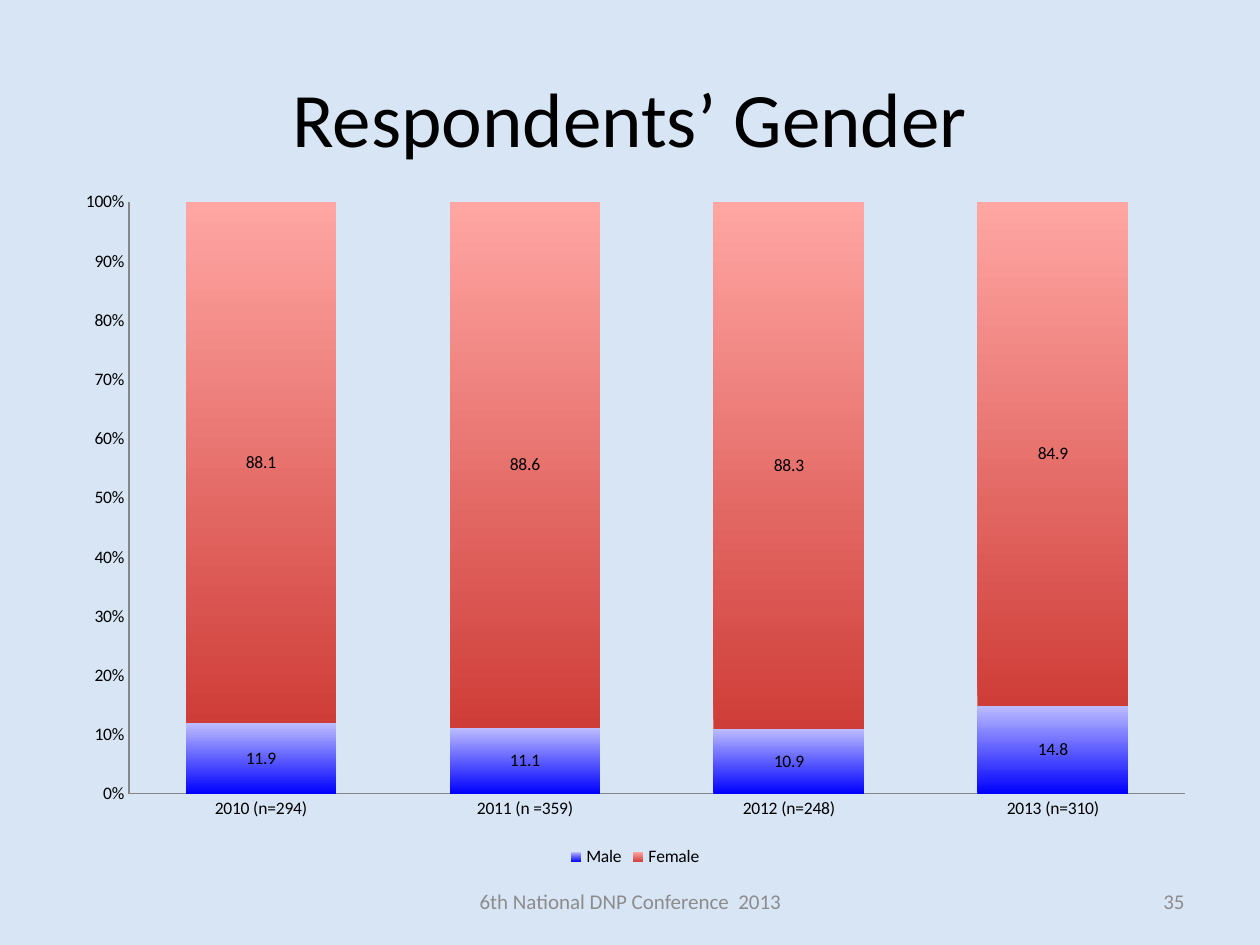
from dataclasses import dataclass

from lxml import etree
from pptx import Presentation
from pptx import util as u
from pptx.chart.data import CategoryChartData
from pptx.dml.color import RGBColor
from pptx.enum import chart as ch
from pptx.enum import text

PX = 914400 / 126
FONT = "Calibri"
COLORS = {
    "background": "D8E5F5",
    "ink": "000000",
    "footer": "8C8C8C",
    "axis": "868686",
    "male_bottom": "0000FF",
    "male_top": "BCBCFF",
    "female_bottom": "CF3D38",
    "female_top": "FFA6A3",
}


@dataclass
class Box:
    left: int
    top: int
    width: int
    height: int

    def emu(self) -> list[int]:
        return [round(v * PX) for v in (self.left, self.top, self.width, self.height)]


@dataclass
class Gender:
    name: str
    values: tuple[float, ...]
    bottom: str
    top: str


@dataclass
class Footer:
    words: str
    box: Box
    align: text.PP_ALIGN


YEARS = ("2010 (n=294)", "2011 (n =359)", "2012 (n=248)", "2013 (n=310)")
GENDERS = (
    Gender("Male", (11.9, 11.1, 10.9, 14.8), "male_bottom", "male_top"),
    Gender("Female", (88.1, 88.6, 88.3, 84.9), "female_bottom", "female_top"),
)
TITLE = Box(63, 38, 1134, 157)
CHART = Box(63, 179, 1144, 693)
PLOT = Box(129, 202, 1056, 592)
FOOTERS = (
    Footer("6th National DNP Conference  2013", Box(431, 876, 399, 50), text.PP_ALIGN.CENTER),
    Footer("35", Box(903, 876, 294, 50), text.PP_ALIGN.RIGHT),
)


def rgb(name: str) -> RGBColor:
    return RGBColor.from_string(COLORS[name])


def style_font(font, size: int, color: str) -> None:
    font.name = FONT
    font.size = u.Pt(size)
    font.color.rgb = rgb(color)


def write(sp, words: str, *, size: int, color: str, align: text.PP_ALIGN) -> None:
    tf = sp.text_frame
    tf.word_wrap = True
    tf.vertical_anchor = text.MSO_ANCHOR.MIDDLE
    p = tf.paragraphs[0]
    p.alignment = align
    r = p.add_run()
    r.text = words
    style_font(r.font, size, color)


def place_plot(chart, outer: Box, inner: Box) -> None:
    area = chart._chartSpace.chart.plotArea
    ns = area.nsmap["c"]
    for old in area.findall(f"{{{ns}}}layout"):
        area.remove(old)
    layout = etree.Element(f"{{{ns}}}layout")
    manual = etree.SubElement(layout, f"{{{ns}}}manualLayout")
    settings = {
        "layoutTarget": "inner",
        "xMode": "edge",
        "yMode": "edge",
        "x": (inner.left - outer.left) / outer.width,
        "y": (inner.top - outer.top) / outer.height,
        "w": inner.width / outer.width,
        "h": inner.height / outer.height,
    }
    for tag, value in settings.items():
        etree.SubElement(manual, f"{{{ns}}}{tag}", val=str(value))
    area.insert(0, layout)


def fill_series(series, gender: Gender) -> None:
    fill = series.format.fill
    fill.gradient()
    fill.gradient_angle = 90
    for stop, color, position in zip(fill.gradient_stops, (gender.bottom, gender.top), (0, 1)):
        stop.color.rgb = rgb(color)
        stop.position = position
    labels = series.data_labels
    labels.show_value = True
    labels.number_format = "0.0"
    labels.number_format_is_linked = False
    labels.position = ch.XL_LABEL_POSITION.CENTER
    style_font(labels.font, 10, "ink")


def add_gender_chart(s) -> None:
    data = CategoryChartData()
    data.categories = YEARS
    for gender in GENDERS:
        data.add_series(gender.name, gender.values)
    kind = ch.XL_CHART_TYPE.COLUMN_STACKED_100
    chart = s.shapes.add_chart(kind, *CHART.emu(), data).chart
    style_font(chart.font, 10, "ink")
    chart.has_title = False
    chart.has_legend = True
    chart.legend.position = ch.XL_LEGEND_POSITION.BOTTOM
    chart.legend.include_in_layout = False
    plot = chart.plots[0]
    plot.gap_width = 75
    plot.overlap = 100
    plot.vary_by_categories = False
    for series, gender in zip(plot.series, GENDERS):
        fill_series(series, gender)
    for axis in (chart.category_axis, chart.value_axis):
        axis.major_tick_mark = ch.XL_TICK_MARK.NONE
        axis.minor_tick_mark = ch.XL_TICK_MARK.NONE
        axis.has_major_gridlines = False
        axis.format.line.color.rgb = rgb("axis")
        axis.format.line.width = u.Pt(0.75)
    value_axis = chart.value_axis
    value_axis.minimum_scale = 0
    value_axis.maximum_scale = 1
    value_axis.major_unit = 0.1
    value_axis.tick_labels.number_format = "0%"
    value_axis.tick_labels.number_format_is_linked = False
    place_plot(chart, CHART, PLOT)


def main() -> None:
    prs = Presentation()
    prs.slide_width, prs.slide_height = u.Inches(10), u.Inches(7.5)
    s = prs.slides.add_slide(prs.slide_layouts[5])
    s.background.fill.solid()
    s.background.fill.fore_color.rgb = rgb("background")
    title = s.shapes.title
    title.left, title.top, title.width, title.height = TITLE.emu()
    write(title, "Respondents’ Gender", size=44, color="ink", align=text.PP_ALIGN.CENTER)
    for footer in FOOTERS:
        sp = s.shapes.add_textbox(*footer.box.emu())
        write(sp, footer.words, size=12, color="footer", align=footer.align)
    add_gender_chart(s)
    prs.save("out.pptx")


if __name__ == "__main__":
    main()
